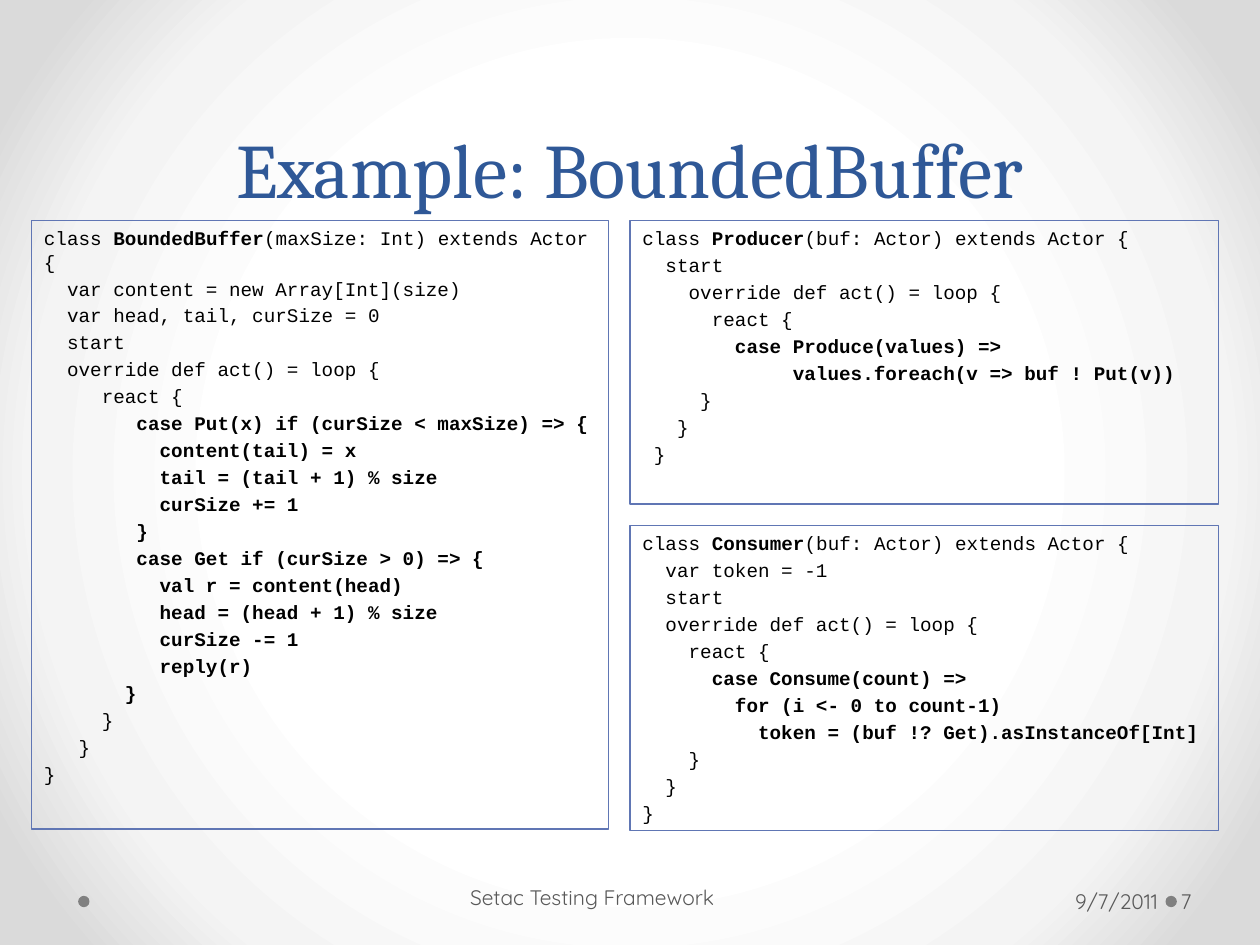
from pptx import Presentation
from pptx.dml.color import RGBColor
from pptx.enum.shapes import MSO_SHAPE as Preset
from pptx.enum.text import MSO_ANCHOR as Anchor, MSO_AUTO_SIZE as AutoSize, PP_ALIGN as Align
from pptx.oxml import parse_xml
from pptx.oxml.ns import nsdecls
from pptx.util import Inches, Pt

BLUE = RGBColor(0x2F, 0x58, 0x97)
OUTLINE = RGBColor(0x60, 0x76, 0xB4)
BLACK = RGBColor(0, 0, 0)
GRAY = RGBColor(0x59, 0x59, 0x59)
DOT_GRAY = RGBColor(0x80, 0x80, 0x80)
GRADIENT = {50: "FFFFFF", 76: "F4F4F4", 92: "DADADA"}

TITLE_FONT = {"name": "Cambria", "size": Pt(44)}
CODE_FONT = {"name": "Courier New", "size": Pt(11)}
FOOTER_FONT = {"name": "Quicksand", "size": Pt(12)}
MARGINS = ("margin_left", "margin_top", "margin_right", "margin_bottom")

BUFFER_CODE = """class **BoundedBuffer**(maxSize: Int) extends Actor {
  var content = new Array[Int](size)
  var head, tail, curSize = 0
  start
  override def act() = loop {
     react {
**        case Put(x) if (curSize < maxSize) => {
**          content(tail) = x
**          tail = (tail + 1) % size
**          curSize += 1
**        }
**        case Get if (curSize > 0) => {
**          val r = content(head)
**          head = (head + 1) % size
**          curSize -= 1
**          reply(r)
**       }
     }
   }
}"""

PRODUCER_CODE = """class **Producer**(buf: Actor) extends Actor {
  start
    override def act() = loop {
      react {
**        case Produce(values) =>
**             values.foreach(v => buf ! Put(v))
     }
   }
 }"""

CONSUMER_CODE = """class **Consumer**(buf: Actor) extends Actor {
  var token = -1
  start
  override def act() = loop {
    react {
**      case Consume(count) =>
**        for (i <- 0 to count-1)
**          token = (buf !? Get).asInstanceOf[Int]
    }
  }
}"""


def set_all(target, values):
    for name, value in values.items():
        setattr(target, name, value)


def format_font(font, values, color):
    set_all(font, values)
    font.color.rgb = color


def paint_background(slide):
    stops = "".join(
        f'<a:gs pos="{percent * 1000}"><a:srgbClr val="{color}"/></a:gs>'
        for percent, color in GRADIENT.items())
    slide.element.cSld.insert(0, parse_xml(
        f'<p:bg {nsdecls("p", "a")}><p:bgPr><a:gradFill rotWithShape="1">'
        f'<a:gsLst>{stops}</a:gsLst><a:path path="circle">'
        '<a:fillToRect l="50000" t="50000" r="50000" b="50000"/></a:path>'
        '</a:gradFill><a:effectLst/></p:bgPr></p:bg>'))


def add_dot(slide, left):
    dot = slide.shapes.add_shape(
        Preset.OVAL, Inches(left), Inches(7.11), Inches(0.09), Inches(0.09))
    dot.shadow.inherit = False
    dot.fill.solid()
    dot.fill.fore_color.rgb = DOT_GRAY
    dot.line.fill.background()


def set_title(slide, text):
    title = slide.shapes.title
    set_all(title, {"left": Inches(0.5), "top": Inches(0),
                    "width": Inches(9), "height": Inches(1.75)})
    frame = title.text_frame
    frame.text = text
    set_all(frame, {"vertical_anchor": Anchor.BOTTOM, "auto_size": AutoSize.NONE})
    paragraph = frame.paragraphs[0]
    set_all(paragraph, {"alignment": Align.CENTER, "line_spacing": Pt(58)})
    format_font(paragraph.runs[0].font, TITLE_FONT, BLUE)


def add_code_box(slide, code, left, top, width, height):
    box = slide.shapes.add_shape(
        Preset.RECTANGLE, Inches(left), Inches(top), Inches(width), Inches(height))
    box.shadow.inherit = False
    box.fill.background()
    box.line.color.rgb = OUTLINE
    box.line.width = Pt(0.75)
    frame = box.text_frame
    set_all(frame, {"word_wrap": True, "vertical_anchor": Anchor.TOP})
    for number, line in enumerate(code.splitlines()):
        paragraph = frame.add_paragraph() if number else frame.paragraphs[0]
        set_all(paragraph, {"alignment": Align.LEFT,
                            "space_before": Pt(2.2 if number else 0)})
        for position, part in enumerate(line.split("**")):
            if part:
                run = paragraph.add_run()
                run.text = part
                format_font(run.font, CODE_FONT | {"bold": position % 2 == 1}, BLACK)


def add_footer(slide, text, left, top, width, alignment, side_margins):
    box = slide.shapes.add_textbox(
        Inches(left), Inches(top), Inches(width), Inches(0.4))
    frame = box.text_frame
    set_all(frame, {"word_wrap": True, "vertical_anchor": Anchor.MIDDLE})
    left_margin, right_margin = side_margins
    sizes = (left_margin, 0.05, right_margin, 0.05)
    set_all(frame, {name: Inches(size) for name, size in zip(MARGINS, sizes)})
    paragraph = frame.paragraphs[0]
    paragraph.alignment = alignment
    run = paragraph.add_run()
    run.text = text
    format_font(run.font, FOOTER_FONT, GRAY)


def main():
    presentation = Presentation()
    set_all(presentation, {"slide_width": Inches(10), "slide_height": Inches(7.5)})
    slide = presentation.slides.add_slide(presentation.slide_layouts[5])
    paint_background(slide)
    for left in (9.25, 0.62):
        add_dot(slide, left)
    set_title(slide, "Example: BoundedBuffer")
    add_code_box(slide, BUFFER_CODE, 0.25, 1.75, 4.58, 4.83)
    add_code_box(slide, CONSUMER_CODE, 5, 4.17, 4.67, 2.42)
    add_code_box(slide, PRODUCER_CODE, 5, 1.75, 4.67, 2.25)
    add_footer(slide, "9/7/2011", 6.96, 6.95, 2.28, Align.RIGHT, (0.1, 0.05))
    add_footer(slide, "Setac Testing Framework", 3.17, 6.92, 3.11, Align.CENTER, (0.05, 0.1))
    add_footer(slide, "7", 9.34, 6.95, 0.61, Align.LEFT, (0.03, 0.05))
    presentation.save("out.pptx")


if __name__ == "__main__":
    main()
